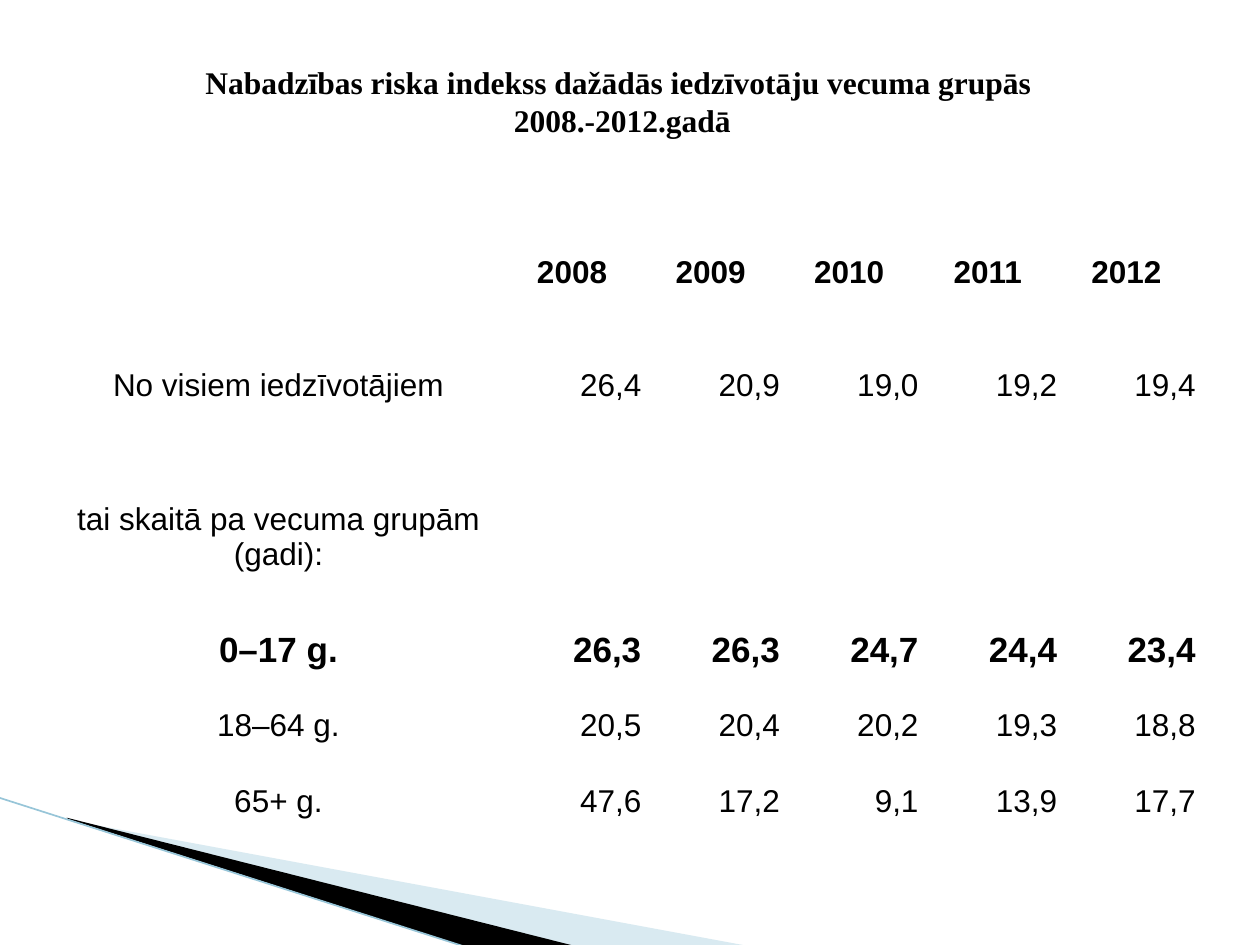
from dataclasses import dataclass

from lxml.etree import SubElement
from pptx import Presentation
from pptx.dml.color import RGBColor
from pptx.enum.shapes import MSO_CONNECTOR as Connector
from pptx.enum.text import MSO_ANCHOR as Anchor, PP_ALIGN as Align
from pptx.oxml.ns import qn
from pptx.util import Inches, Pt

TITLE = [
    "Nabadzības riska indekss dažādās iedzīvotāju vecuma grupās ",
    "2008.-2012.gadā",
]
YEARS = ["2008", "2009", "2010", "2011", "2012"]
ROWS = [
    ("", YEARS),
    ("No visiem iedzīvotājiem", ["26,4", "20,9", "19,0", "19,2", "19,4"]),
    ("tai skaitā pa vecuma grupām (gadi):", [""] * len(YEARS)),
    ("0–17 g.", ["26,3", "26,3", "24,7", "24,4", "23,4"]),
    ("18–64 g.", ["20,5", "20,4", "20,2", "19,3", "18,8"]),
    ("65+ g.", ["47,6", "17,2", "9,1", "13,9", "17,7"]),
]
HEADER_ROW, FOCUS_ROW = 0, 3
TALL_ROWS = (1, 2)
ROW_HEIGHT = 0.6
LABEL_WIDTH, YEAR_WIDTH = 3.56, 1.1

PALE_WEDGE = [(0.55, 6.51), (5.95, 7.51), (4.56, 7.51), (0.55, 6.5)]
DARK_WEDGE = [(0.53, 6.49), (4.57, 7.51), (3.72, 7.52), (0.54, 6.5)]
EDGE = (-0.01, 6.33, 3.71, 7.52)
NO_STYLE = "{2D5ABB26-0587-4C30-8999-92F81FD0307C}"


@dataclass(frozen=True)
class Theme:
    ink: RGBColor = RGBColor(0, 0, 0)
    pale: RGBColor = RGBColor(0xA0, 0xCB, 0xDC)
    edge: RGBColor = RGBColor(0x97, 0xC5, 0xD8)
    pale_opacity: int = 40
    title_font: str = "Times New Roman"
    table_font: str = "Arial"
    text_size: int = 18
    focus_size: int = 20
    edge_width: float = 0.95


THEME = Theme()


def add_span(para, text, font, size, bold, align):
    para.alignment = align
    span = para.add_run()
    span.text = text
    span.font.name = font
    span.font.size = Pt(size)
    span.font.bold = bold
    span.font.color.rgb = THEME.ink


def add_wedge(page, points, color, opacity=100):
    corners = [(Inches(x), Inches(y)) for x, y in points]
    builder = page.shapes.build_freeform(*corners[0])
    builder.add_line_segments(corners[1:], close=True)
    wedge = builder.convert_to_shape()
    wedge.shadow.inherit = False
    wedge.line.fill.background()
    wedge.fill.solid()
    wedge.fill.fore_color.rgb = color
    if opacity < 100:
        tone = wedge._element.spPr.find(qn("a:solidFill"))[0]
        SubElement(tone, qn("a:alpha"), val=str(opacity * 1000))


def add_edge(page):
    edge = page.shapes.add_connector(Connector.STRAIGHT, *map(Inches, EDGE))
    edge.line.color.rgb = THEME.edge
    edge.line.width = Pt(THEME.edge_width)
    SubElement(edge._element.spPr, qn("a:effectLst"))


def add_title(page):
    box = page.shapes.add_textbox(*map(Inches, (1.5, 0.45, 6.88, 1.01)))
    frame = box.text_frame
    frame.word_wrap = False
    frame.vertical_anchor = Anchor.TOP
    for index, line in enumerate(TITLE):
        para = frame.add_paragraph() if index else frame.paragraphs[0]
        add_span(para, line, THEME.title_font, THEME.text_size, True, Align.CENTER)


def add_risk_table(page):
    widths = [LABEL_WIDTH] + [YEAR_WIDTH] * len(YEARS)
    heights = [ROW_HEIGHT * (2 if row in TALL_ROWS else 1) for row in range(len(ROWS))]
    size = (0.43, 1.86, sum(widths), sum(heights))
    table = page.shapes.add_table(len(ROWS), len(widths), *map(Inches, size)).table
    table.first_row = table.horz_banding = False
    table._tbl.tblPr.find(qn("a:tableStyleId")).text = NO_STYLE
    for column, width in zip(table.columns, widths):
        column.width = Inches(width)
    for row, height in zip(table.rows, heights):
        row.height = Inches(height)

    for row, (label, values) in enumerate(ROWS):
        bold = row in (HEADER_ROW, FOCUS_ROW)
        points = THEME.focus_size if row == FOCUS_ROW else THEME.text_size
        for column, text in enumerate([label, *values]):
            cell = table.cell(row, column)
            cell.fill.background()
            cell.vertical_anchor = Anchor.MIDDLE
            cell.margin_left = cell.margin_right = 0
            cell.margin_top = cell.margin_bottom = 0
            if text:
                centred = row == HEADER_ROW or column == 0
                align = Align.CENTER if centred else Align.RIGHT
                para = cell.text_frame.paragraphs[0]
                add_span(para, text, THEME.table_font, points, bold, align)


def main():
    deck = Presentation()
    deck.slide_width, deck.slide_height = Inches(10), Inches(7.5)
    page = deck.slides.add_slide(deck.slide_layouts[6])
    add_wedge(page, PALE_WEDGE, THEME.pale, THEME.pale_opacity)
    add_wedge(page, DARK_WEDGE, THEME.ink)
    add_edge(page)
    add_risk_table(page)
    add_title(page)
    deck.save("out.pptx")


if __name__ == "__main__":
    main()
